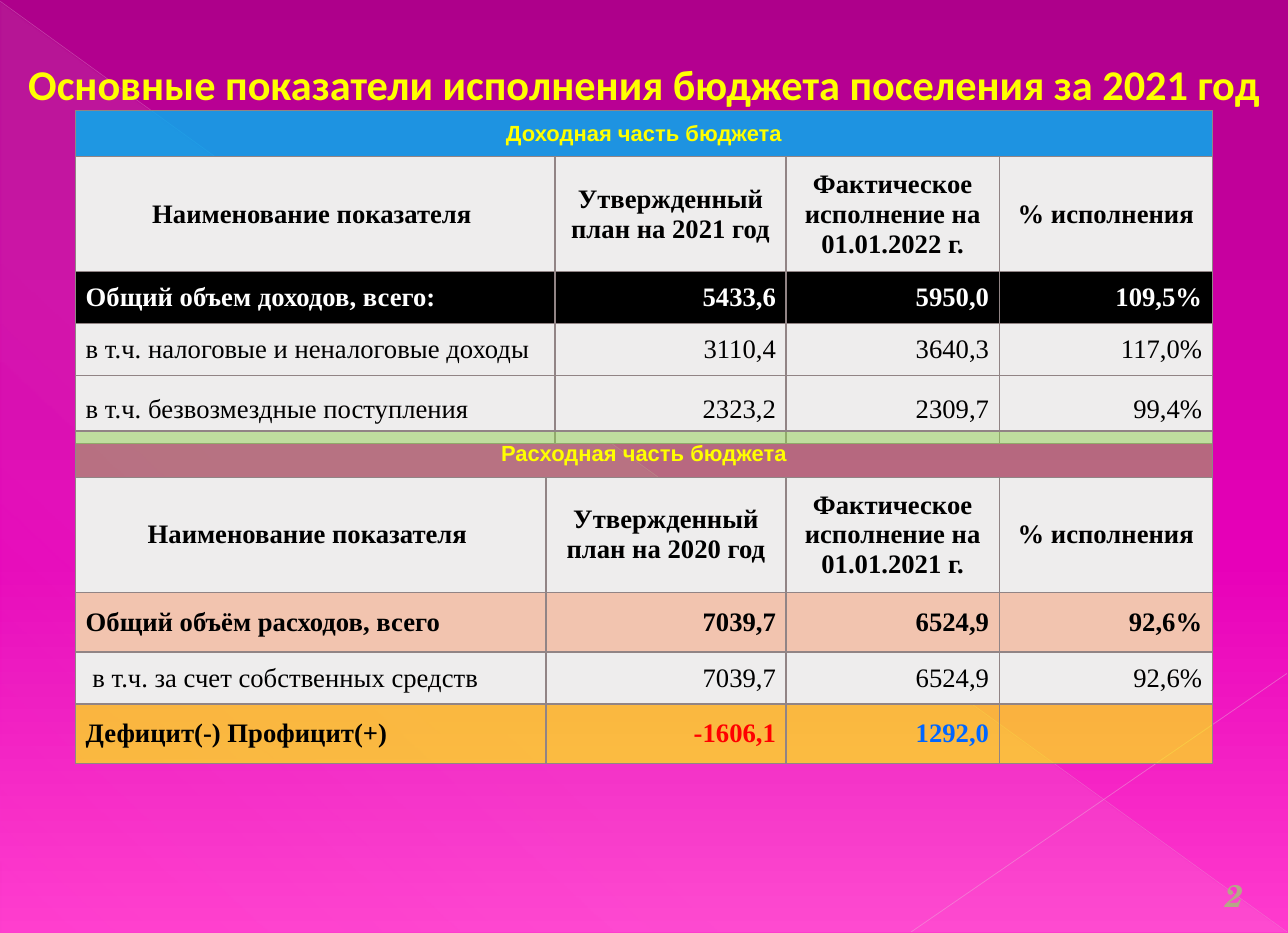
"""Build a slide with the income and expense tables of a settlement budget."""
from lxml import etree
from pptx import Presentation
from pptx import util as u
from pptx.dml.color import RGBColor
from pptx.enum import shapes, text
from pptx.oxml.ns import qn

YELLOW = RGBColor(0xFF, 0xFF, 0x00)
BLACK = RGBColor(0x00, 0x00, 0x00)
WHITE = RGBColor(0xFF, 0xFF, 0xFF)
RED = RGBColor(0xFF, 0x00, 0x00)
BLUE = RGBColor(0x00, 0x66, 0xFF)
SKY = RGBColor(0x00, 0xB0, 0xF0)
GREEN = RGBColor(0x92, 0xD0, 0x50)
GREY = RGBColor(0xEE, 0xED, 0xED)
PEACH = RGBColor(0xF2, 0xC4, 0xAF)
SAND = RGBColor(0xB5, 0xA7, 0x88)
BORDER = RGBColor(0x91, 0x84, 0x85)
VEIL = RGBColor(0xF4, 0xE7, 0xED)
DIAGONAL = RGBColor(0xE9, 0xA8, 0xD7)
CORNER = RGBColor(0xEB, 0xB2, 0xDB)
PLUM = RGBColor(0xAE, 0x00, 0x8B)
MAGENTA = RGBColor(0xE7, 0x00, 0xB9)
PINK = RGBColor(0xFF, 0x3B, 0xCE)

WIDTH, HEIGHT = 11.42, 8.27
LEFT, CENTER, RIGHT = text.PP_ALIGN.LEFT, text.PP_ALIGN.CENTER, text.PP_ALIGN.RIGHT
MIDDLE, BOTTOM = text.MSO_ANCHOR.MIDDLE, text.MSO_ANCHOR.BOTTOM

TITLE = {"size": u.Pt(27), "name": "Calibri", "bold": True}
NUMBER = {"size": u.Pt(20), "name": "TeX Gyre Schola", "bold": True, "italic": True}
BANNER = {"size": u.Pt(14), "name": "Arial", "bold": True}
PLAIN = {"size": u.Pt(17), "name": "Times New Roman", "bold": False}
STRONG = {**PLAIN, "bold": True}

INCOME = [
    (0.41, ["Доходная часть бюджета"], BANNER, [YELLOW], SKY, 84),
    (1.02, ["Наименование показателя ", "Утвержденный план на 2021 год",
            "Фактическое исполнение на 01.01.2022 г.", "% исполнения"],
     STRONG, [BLACK] * 4, GREY, 100),
    (0.46, ["Общий объем доходов, всего:", "5433,6", "5950,0", "109,5%"],
     STRONG, [WHITE] * 4, BLACK, 100),
    (0.46, ["в т.ч. налоговые и неналоговые доходы", "3110,4", "3640,3", "117,0%"],
     PLAIN, [BLACK] * 4, GREY, 100),
    (0.6, ["в т.ч. безвозмездные поступления", "2323,2", "2309,7", "99,4%"],
     PLAIN, [BLACK] * 4, GREY, 100),
]
EXPENSES = [
    (0.41, ["Расходная часть бюджета"], BANNER, [YELLOW], GREEN, 50),
    (1.02, ["Наименование показателя ", "Утвержденный план на 2020 год",
            "Фактическое исполнение на 01.01.2021 г.", "% исполнения"],
     STRONG, [BLACK] * 4, GREY, 100),
    (0.53, ["Общий объём расходов, всего", "7039,7", "6524,9", "92,6%"],
     STRONG, [BLACK] * 4, PEACH, 100),
    (0.46, [" в т.ч. за счет собственных средств", "7039,7", "6524,9", "92,6%"],
     PLAIN, [BLACK] * 4, GREY, 100),
    (0.53, ["Дефицит(-) Профицит(+)", "-1606,1", "1292,0", ""],
     STRONG, [BLACK, RED, BLUE, BLACK], YELLOW, 67),
]


def add_color(parent, color, opacity=100):
    tone = etree.SubElement(parent, qn("a:srgbClr"), val=str(color))
    if opacity < 100:
        etree.SubElement(tone, qn("a:alpha"), val=str(opacity * 1000))


def set_gradient(fill, holder, stops, angle):
    fill.gradient()
    gradient = holder.find(qn("a:gradFill"))
    stop_list = gradient.find(qn("a:gsLst"))
    stop_list.clear()
    for position, color, opacity in stops:
        stop = etree.SubElement(stop_list, qn("a:gs"), pos=str(position * 1000))
        add_color(stop, color, opacity)
    gradient.find(qn("a:lin")).set("ang", str(angle * 60000))


def set_opacity(holder, opacity):
    if opacity < 100:
        tone = holder.find(f"{qn('a:solidFill')}/{qn('a:srgbClr')}")
        etree.SubElement(tone, qn("a:alpha"), val=str(opacity * 1000))


class BudgetSlide:
    def __init__(self, deck):
        self.page = deck.slides.add_slide(deck.slide_layouts[5])
        self.margins = (0.11, 0.06, 0.11, 0.06)

    def background(self, stops, angle):
        fill = self.page.background.fill
        fill.solid()
        set_gradient(fill, self.page.element.find(f".//{qn('p:bgPr')}"), stops, angle)

    def triangle(self, place, stops, angle):
        shape = self.page.shapes.add_shape(
            shapes.MSO_SHAPE.RIGHT_TRIANGLE, *map(u.Inches, place))
        shape.shadow.inherit = False
        shape.line.fill.background()
        set_gradient(shape.fill, shape.element.spPr, stops, angle)

    def line(self, ends, color, width, opacity):
        line = self.page.shapes.add_connector(
            shapes.MSO_CONNECTOR.STRAIGHT, *map(u.Inches, ends))
        line.line.color.rgb = color
        line.line.width = u.Pt(width)
        properties = line.element.spPr
        set_opacity(properties.find(qn("a:ln")), opacity)
        etree.SubElement(properties, qn("a:effectLst"))

    def add_wording(self, frame, wording, style, color, align):
        para = frame.paragraphs[0]
        para.alignment = align
        span = para.add_run()
        span.text = wording
        for name, value in style.items():
            setattr(span.font, name, value)
        span.font.color.rgb = color
        return para

    def fill_box(self, box, wording, style, color, anchor, spacing):
        frame = box.text_frame
        frame.word_wrap = True
        frame.auto_size = text.MSO_AUTO_SIZE.NONE
        frame.vertical_anchor = anchor
        for side, margin in zip(("left", "top", "right", "bottom"), self.margins):
            setattr(frame, f"margin_{side}", u.Inches(margin))
        para = self.add_wording(frame, wording, style, color, CENTER)
        para.line_spacing = spacing

    def title(self, place, wording):
        box = self.page.shapes.title
        for name, value in zip(("left", "top", "width", "height"), place):
            setattr(box, name, u.Inches(value))
        self.page.shapes.element.append(box.element)
        self.fill_box(box, wording, TITLE, YELLOW, MIDDLE, 0.8)

    def number(self, place, wording):
        box = self.page.shapes.add_textbox(*map(u.Inches, place))
        self.fill_box(box, wording, NUMBER, SAND, BOTTOM, 0.9)

    def format_cell(self, cell, color, opacity):
        cell.fill.solid()
        cell.fill.fore_color.rgb = color
        cell.vertical_anchor = MIDDLE
        for side in ("left", "top", "right", "bottom"):
            setattr(cell, f"margin_{side}", u.Inches(0.09))
        properties = cell._tc.get_or_add_tcPr()
        set_opacity(properties, opacity)
        for index, side in enumerate("LRTB"):
            border = etree.Element(qn(f"a:ln{side}"), w=str(u.Pt(1)))
            add_color(etree.SubElement(border, qn("a:solidFill")), BORDER)
            properties.insert(index, border)

    def table(self, top, columns, rows):
        place = (0.67, top, sum(columns), sum(row[0] for row in rows))
        table = self.page.shapes.add_table(
            len(rows), len(columns), *map(u.Inches, place)).table
        table.first_row = table.horz_banding = False
        for column, width in zip(table.columns, columns):
            column.width = u.Inches(width)
        for index, (height, wordings, style, colors, fill, opacity) in enumerate(rows):
            table.rows[index].height = u.Inches(height)
            cells = [table.cell(index, column) for column in range(len(columns))]
            for cell in cells:
                self.format_cell(cell, fill, opacity)
            if len(wordings) == 1:
                cells[0].merge(cells[-1])
            for column, (cell, wording, color) in enumerate(zip(cells, wordings, colors)):
                align = CENTER if index < 2 else RIGHT if column else LEFT
                if wording:
                    self.add_wording(cell.text_frame, wording, style, color, align)


def main():
    deck = Presentation()
    deck.slide_width, deck.slide_height = u.Inches(WIDTH), u.Inches(HEIGHT)
    slide = BudgetSlide(deck)
    slide.background([(0, PLUM, 100), (60, MAGENTA, 100), (100, PINK, 100)], 90)
    slide.triangle((0.01, 0.02, 11.4, 8.24),
                   [(0, VEIL, 10), (70, VEIL, 8), (100, VEIL, 1)], 133)
    slide.line((0, 0.01, 11.41, 8.26), DIAGONAL, 0.39, 35)
    slide.line((11.41, 5.97, 8.08, 8.26), CORNER, 0.47, 45)
    slide.number((10.66, 7.72, 0.57, 0.44), "2")
    slide.title((0, 0.56, WIDTH, 0.44),
                "Основные показатели исполнения бюджета поселения за 2021 год")
    slide.table(0.98, (4.25, 2.05, 1.89, 1.89), INCOME)
    slide.table(3.82, (4.17, 2.13, 1.89, 1.89), EXPENSES)
    deck.save("out.pptx")


if __name__ == "__main__":
    main()
